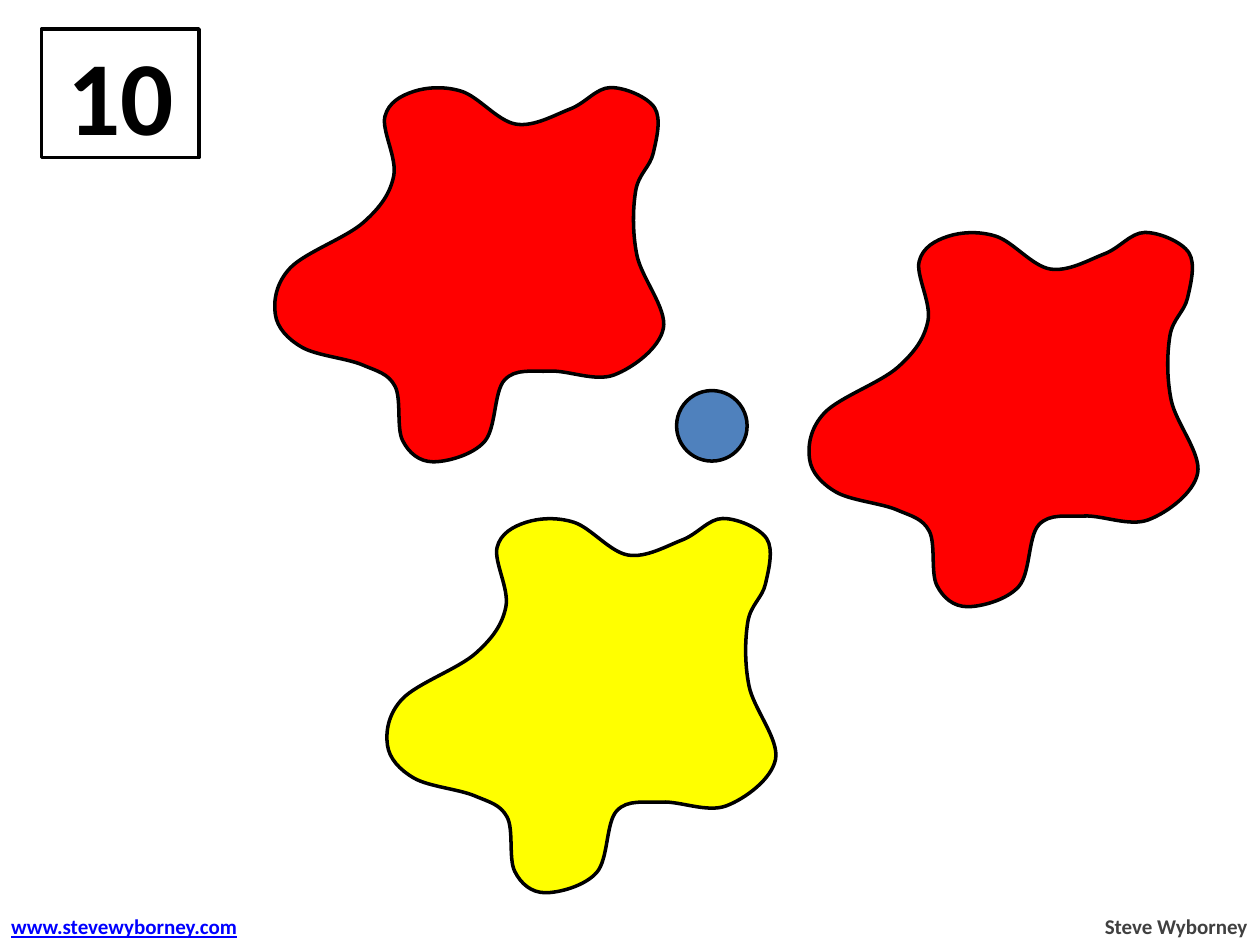
from dataclasses import dataclass

from lxml.etree import SubElement
from pptx import Presentation
from pptx.dml.color import RGBColor as Rgb
from pptx.enum.shapes import MSO_SHAPE as Preset
from pptx.enum.text import MSO_ANCHOR as Anchor, MSO_AUTO_SIZE as AutoSize, PP_ALIGN as Align
from pptx.oxml.ns import qn
from pptx.util import Inches, Pt


@dataclass(frozen=True)
class Theme:
    font: str = "Calibri"
    number_size: int = 60
    credit_size: int = 12
    outline_width: int = 2
    black: str = "000000"
    white: str = "FFFFFF"
    grey: str = "404040"
    address_blue: str = "0000FF"
    dot_blue: str = "4F81BD"
    red: str = "FF0000"
    yellow: str = "FFFF00"


THEME = Theme()

# The slide is a grid of square cells
COLUMNS, ROWS = 100, 75
CELL = Inches(0.1)
UNITS_PER_CELL = 100

# Column and row of each dot to count
DOT_SIZE = 5.6
DOTS = [
    (68.4, 33.3), (82.9, 25.2), (41.2, 62), (34.7, 54.3), (26.9, 19.8),
    (32.4, 10.2), (42.6, 45.4), (53.7, 31), (53.7, 43.2), (53.7, 57),
]

# Points on the splat's outline, in cells, before its quarter turn
SPLAT_TURN = 270
SPLAT_POINTS = [
    (9.1, 2.1), (11.7, 0), (15.4, 1.2), (19, 7), (22.7, 9.4), (27.4, 8.7),
    (29.4, 11), (29.4, 14.8), (26.8, 19.1), (28, 23.4), (29.7, 26.6), (28.1, 30.1),
    (24.5, 30), (21.5, 28.6), (16.4, 28.7), (10.6, 30.8), (6.9, 26.9), (7.2, 21.8),
    (6.5, 18.2), (1.6, 16.6), (0, 12.5), (1.7, 10.1), (6, 9.5), (7.7, 6.9),
]

# Column, row and colour of each splat
SPLATS = [
    (22.4, 6.4, THEME.red),
    (31.3, 40.6, THEME.yellow),
    (64.8, 17.9, THEME.red),
]


def cells(*counts):
    return [round(count * CELL) for count in counts]


def style_shape(shape, fill):
    shape.shadow.inherit = False
    shape.fill.solid()
    shape.fill.fore_color.rgb = Rgb.from_string(fill)
    shape.line.color.rgb = Rgb.from_string(THEME.black)
    shape.line.width = Pt(THEME.outline_width)


def write(frame, text, align, color, **formats):
    paragraph = frame.paragraphs[0]
    paragraph.alignment = align
    run = paragraph.add_run()
    run.text = text
    for name, value in {"name": THEME.font, "bold": True, **formats}.items():
        setattr(run.font, name, value)
    run.font.color.rgb = Rgb.from_string(color)


def add_preset(slide, preset, area, fill):
    shape = slide.shapes.add_shape(preset, *cells(*area))
    style_shape(shape, fill)
    return shape


def add_credit(slide, area, text, align, color, **formats):
    frame = slide.shapes.add_textbox(*cells(*area)).text_frame
    frame.word_wrap = False
    frame.auto_size = AutoSize.SHAPE_TO_FIT_TEXT
    write(frame, text, align, color, size=Pt(THEME.credit_size), **formats)


def handles(before, start, end, after):
    """Both curve handles that lead smoothly from start to end."""
    first = [s + (e - b) / 6 for b, s, e in zip(before, start, end)]
    second = [e - (a - s) / 6 for s, e, a in zip(start, end, after)]
    return first, second


def smooth(outline):
    """Turn the sides of a closed freeform into curves through its corners."""
    sides = list(outline.element.iter(qn("a:lnTo")))
    corners = [(int(side[0].get("x")), int(side[0].get("y"))) for side in sides]
    count = len(corners)
    for index, side in enumerate(sides):
        neighbours = [corners[(index + shift) % count] for shift in (-2, -1, 0, 1)]
        side.tag = qn("a:cubicBezTo")
        side.remove(side[0])
        for x, y in (*handles(*neighbours), corners[index]):
            SubElement(side, qn("a:pt"), x=str(round(x)), y=str(round(y)))


def add_splat(slide, column, row, fill):
    start, *rest = [(x * UNITS_PER_CELL, y * UNITS_PER_CELL) for x, y in SPLAT_POINTS]
    builder = slide.shapes.build_freeform(*start, scale=CELL / UNITS_PER_CELL)
    builder.add_line_segments([*rest, start], close=True)
    splat = builder.convert_to_shape(*cells(column, row))
    smooth(splat)
    splat.rotation = SPLAT_TURN
    style_shape(splat, fill)


def main():
    deck = Presentation()
    deck.slide_width, deck.slide_height = cells(COLUMNS, ROWS)
    slide = deck.slides.add_slide(deck.slide_layouts[6])

    # Number of the puzzle
    number = add_preset(slide, Preset.RECTANGLE, (3.3, 2.3, 12.5, 10.2), THEME.white)
    number.text_frame.vertical_anchor = Anchor.MIDDLE
    write(number.text_frame, "10", Align.CENTER, THEME.black, size=Pt(THEME.number_size))

    # Author and web address along the bottom edge
    add_credit(slide, (86.6, 72, 13.4, 3), "Steve Wyborney", Align.RIGHT, THEME.grey)
    add_credit(slide, (-0.1, 72, 20.5, 3), "www.stevewyborney.com", Align.LEFT,
               THEME.address_blue, underline=True)

    # Dots, with the splats on top of them
    for column, row in DOTS:
        add_preset(slide, Preset.OVAL, (column, row, DOT_SIZE, DOT_SIZE), THEME.dot_blue)
    for column, row, fill in SPLATS:
        add_splat(slide, column, row, fill)

    deck.save("out.pptx")


if __name__ == "__main__":
    main()
